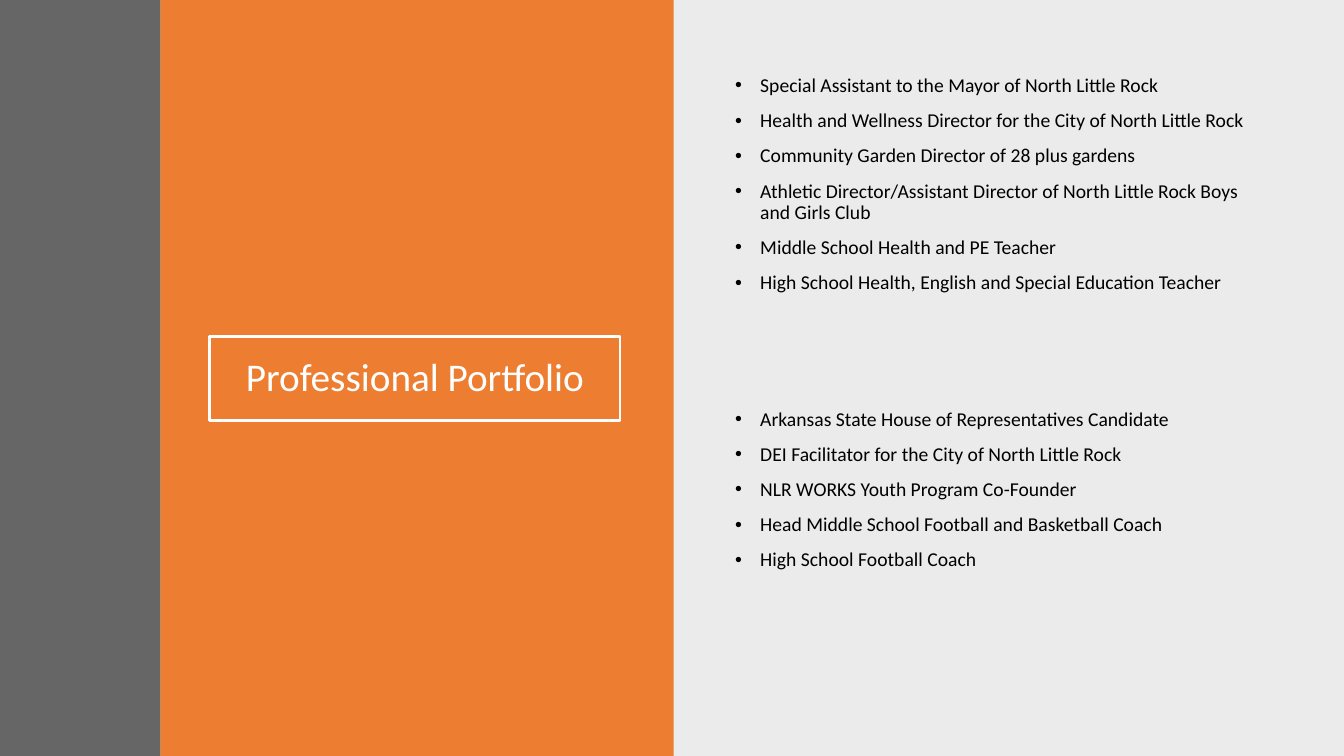
from lxml.etree import SubElement
from pptx import Presentation
from pptx.dml.color import RGBColor
from pptx.enum.shapes import MSO_SHAPE
from pptx.enum.text import MSO_ANCHOR, MSO_AUTO_SIZE, PP_ALIGN
from pptx.oxml.ns import qn
from pptx.util import Inches, Pt

# Content
TITLE = "Professional Portfolio"
CIVIC = [
    "Special Assistant to the Mayor of North Little Rock",
    "Health and Wellness Director for the City of North Little Rock",
    "Community Garden Director of 28 plus gardens",
    "Athletic Director/Assistant Director of North Little Rock Boys and Girls Club",
    "Middle School Health and PE Teacher",
    "High School Health, English and Special Education Teacher",
]
COACH = [
    "Arkansas State House of Representatives Candidate",
    "DEI Facilitator for the City of North Little Rock",
    "NLR WORKS Youth Program Co-Founder",
    "Head Middle School Football and Basketball Coach",
    "High School Football Coach",
]
COLORS = {"black": "000000", "white": "FFFFFF", "orange": "ED7D31", "gray": "404040"}
WIDE, HIGH = 13.33, 7.5
# Panels: left, width, color, opacity in percent
PANELS = [(6.67, 6.67, "black", 8), (1.59, 5.09, "orange", 100), (0, 1.59, "gray", 80)]


def color(name):
    return RGBColor.from_string(COLORS[name])


def place(shape, left, top, width, height):
    shape.left, shape.top = Inches(left), Inches(top)
    shape.width, shape.height = Inches(width), Inches(height)


def write(shape, lines, size=14, ink="black", align=PP_ALIGN.LEFT,
          anchor=MSO_ANCHOR.TOP, gap=0, bullet=False):
    frame = shape.text_frame
    frame.text = "\n".join(lines)
    frame.word_wrap = True
    frame.auto_size = MSO_AUTO_SIZE.NONE
    frame.vertical_anchor = anchor
    for i, para in enumerate(frame.paragraphs):
        para.alignment = align
        para.line_spacing = 0.9
        para.space_before = Pt(gap if i else 0)
        if bullet:
            props = para._p.get_or_add_pPr()
            props.set("marL", str(Inches(0.25)))
            props.set("indent", str(-Inches(0.25)))
            SubElement(props, qn("a:buFont")).set("typeface", "Arial")
            SubElement(props, qn("a:buChar")).set("char", "•")
        for run in para.runs:
            run.font.name = "Calibri"
            run.font.size = Pt(size)
            run.font.color.rgb = color(ink)


def main():
    deck = Presentation()
    deck.slide_width, deck.slide_height = Inches(WIDE), Inches(HIGH)
    slide = deck.slides.add_slide(deck.slide_layouts[3])
    title = slide.shapes.title

    # Background panels, placed behind the title
    for left, width, name, alpha in PANELS:
        panel = slide.shapes.add_shape(
            MSO_SHAPE.RECTANGLE, Inches(left), 0, Inches(width), Inches(HIGH))
        panel.shadow.inherit = False
        panel.line.fill.background()
        panel.fill.solid()
        panel.fill.fore_color.rgb = color(name)
        if alpha < 100:
            tint = panel.element.spPr.find(".//" + qn("a:srgbClr"))
            SubElement(tint, qn("a:alpha")).set("val", str(alpha * 1000))
        title.element.addprevious(panel.element)

    # Framed title
    place(title, 2.08, 3.34, 4.07, 0.83)
    title.line.color.rgb = color("white")
    title.line.width = Pt(2)
    write(title, [TITLE], size=28, ink="white", align=PP_ALIGN.CENTER,
          anchor=MSO_ANCHOR.MIDDLE)

    # Role lists
    for slot, top, roles in [(1, 0.7, CIVIC), (2, 4.01, COACH)]:
        body = slide.placeholders[slot]
        place(body, 7.19, top, 5.53, 2.79)
        write(body, roles, gap=10, bullet=True)

    deck.save("out.pptx")


if __name__ == "__main__":
    main()
